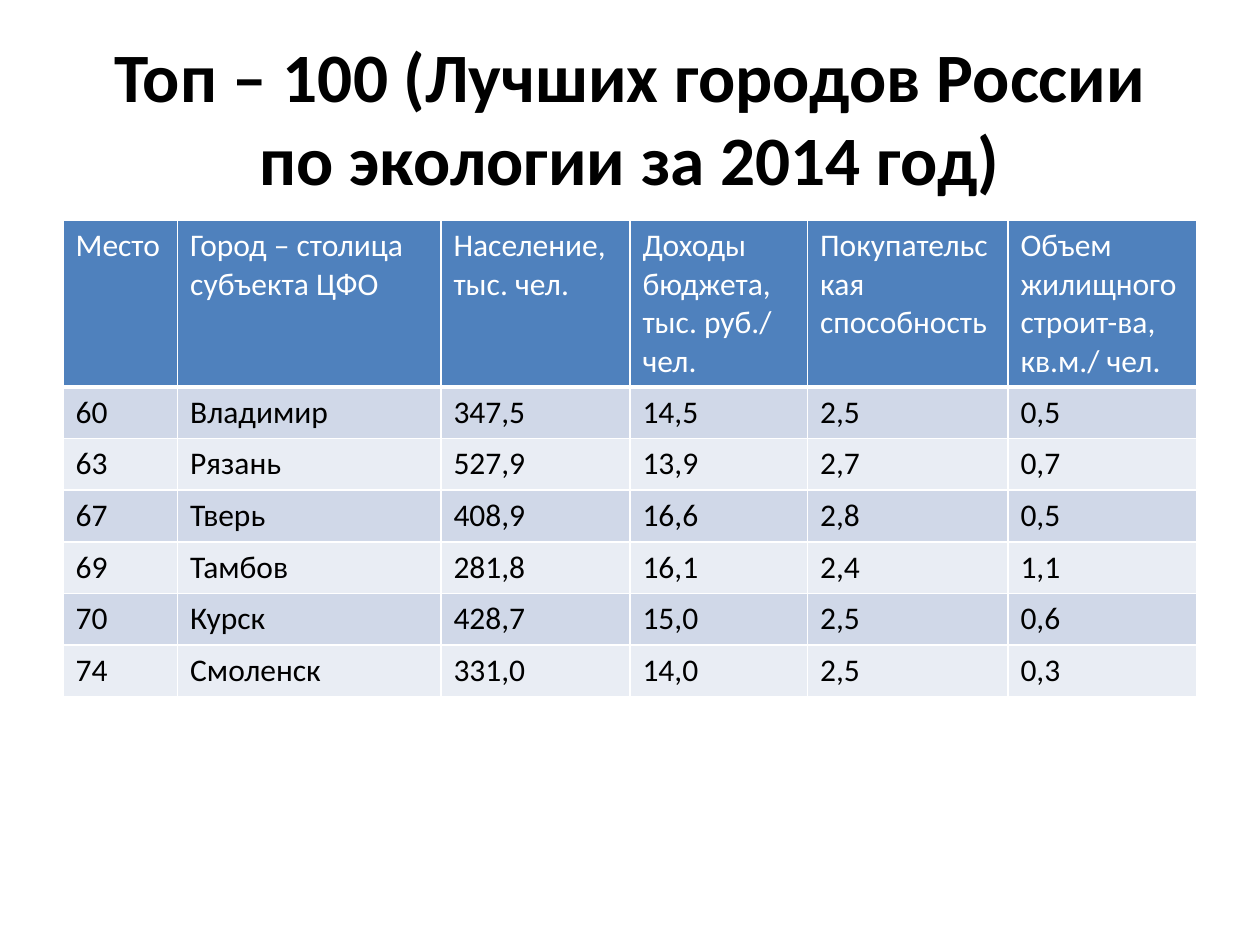
from lxml.etree import SubElement
from pptx import Presentation
from pptx.dml.color import RGBColor
from pptx.enum.text import MSO_ANCHOR, MSO_AUTO_SIZE, PP_ALIGN
from pptx.oxml.ns import qn
from pptx.util import Inches, Pt

TITLE = "Топ – 100 (Лучших городов России по экологии за 2014 год)"
HEADERS = [
    "Место",
    "Город – столица субъекта ЦФО",
    "Население, тыс. чел.",
    "Доходы бюджета, тыс. руб./ чел.",
    "Покупательская способность",
    "Объем жилищного строит-ва, кв.м./ чел.",
]
CITIES = [
    ("60", "Владимир", "347,5", "14,5", "2,5", "0,5"),
    ("63", "Рязань", "527,9", "13,9", "2,7", "0,7"),
    ("67", "Тверь", "408,9", "16,6", "2,8", "0,5"),
    ("69", "Тамбов", "281,8", "16,1", "2,4", "1,1"),
    ("70", "Курск", "428,7", "15,0", "2,5", "0,6"),
    ("74", "Смоленск", "331,0", "14,0", "2,5", "0,3"),
]
COLUMN_WIDTHS = [0.91, 2.09, 1.5, 1.41, 1.59, 1.5]
HEADER_HEIGHT, ROW_HEIGHT = 1.27, 0.41
HEADER_FILL, BAND_FILLS = "4F81BD", ("D0D8E8", "E9EDF4")
BLACK, WHITE = "000000", "FFFFFF"
TITLE_FONT = {"name": "Calibri", "size": Pt(39.6), "bold": True}
TABLE_FONT = {"name": "Calibri", "size": Pt(18), "bold": False}


def color(hex_value):
    return RGBColor.from_string(hex_value)


def format_font(font, values, hex_value):
    for name, value in values.items():
        setattr(font, name, value)
    font.color.rgb = color(hex_value)


def set_borders(cell, widths):
    """Draw white borders; widths maps a side (L, R, T, B) to points."""
    properties = cell._tc.get_or_add_tcPr()
    for side, width in widths.items():
        line = SubElement(properties, qn(f"a:ln{side}"), w=str(Pt(width)))
        fill = SubElement(line, qn("a:solidFill"))
        SubElement(fill, qn("a:srgbClr"), val=WHITE)


def add_title(slide):
    title = slide.shapes.title
    title.left, title.top = Inches(0.5), Inches(0.3)
    title.width, title.height = Inches(9), Inches(1.25)
    frame = title.text_frame
    frame.text = TITLE
    frame.word_wrap = True
    frame.auto_size = MSO_AUTO_SIZE.NONE
    frame.vertical_anchor = MSO_ANCHOR.MIDDLE
    paragraph = frame.paragraphs[0]
    paragraph.alignment = PP_ALIGN.CENTER
    format_font(paragraph.runs[0].font, TITLE_FONT, BLACK)


def add_city_table(slide):
    rows = [HEADERS, *CITIES]
    heights = [HEADER_HEIGHT] + [ROW_HEIGHT] * len(CITIES)
    table = slide.shapes.add_table(
        len(rows), len(HEADERS), Inches(0.5), Inches(1.75),
        Inches(sum(COLUMN_WIDTHS)), Inches(sum(heights)),
    ).table
    for column, width in zip(table.columns, COLUMN_WIDTHS):
        column.width = Inches(width)

    for row_index, (values, height) in enumerate(zip(rows, heights)):
        table.rows[row_index].height = Inches(height)
        is_header = row_index == 0
        fill = HEADER_FILL if is_header else BAND_FILLS[(row_index - 1) % 2]
        borders = {
            "L": 1,
            "R": 1,
            "T": 3 if row_index == 1 else 1,
            "B": 3 if is_header else 1,
        }
        for column_index, value in enumerate(values):
            cell = table.cell(row_index, column_index)
            cell.text = value
            set_borders(cell, borders)
            cell.fill.solid()
            cell.fill.fore_color.rgb = color(fill)
            font = cell.text_frame.paragraphs[0].runs[0].font
            format_font(font, TABLE_FONT, WHITE if is_header else BLACK)


def main():
    presentation = Presentation()
    presentation.slide_width = Inches(10)
    presentation.slide_height = Inches(7.5)
    slide = presentation.slides.add_slide(presentation.slide_layouts[5])
    add_title(slide)
    add_city_table(slide)
    presentation.save("out.pptx")


if __name__ == "__main__":
    main()
